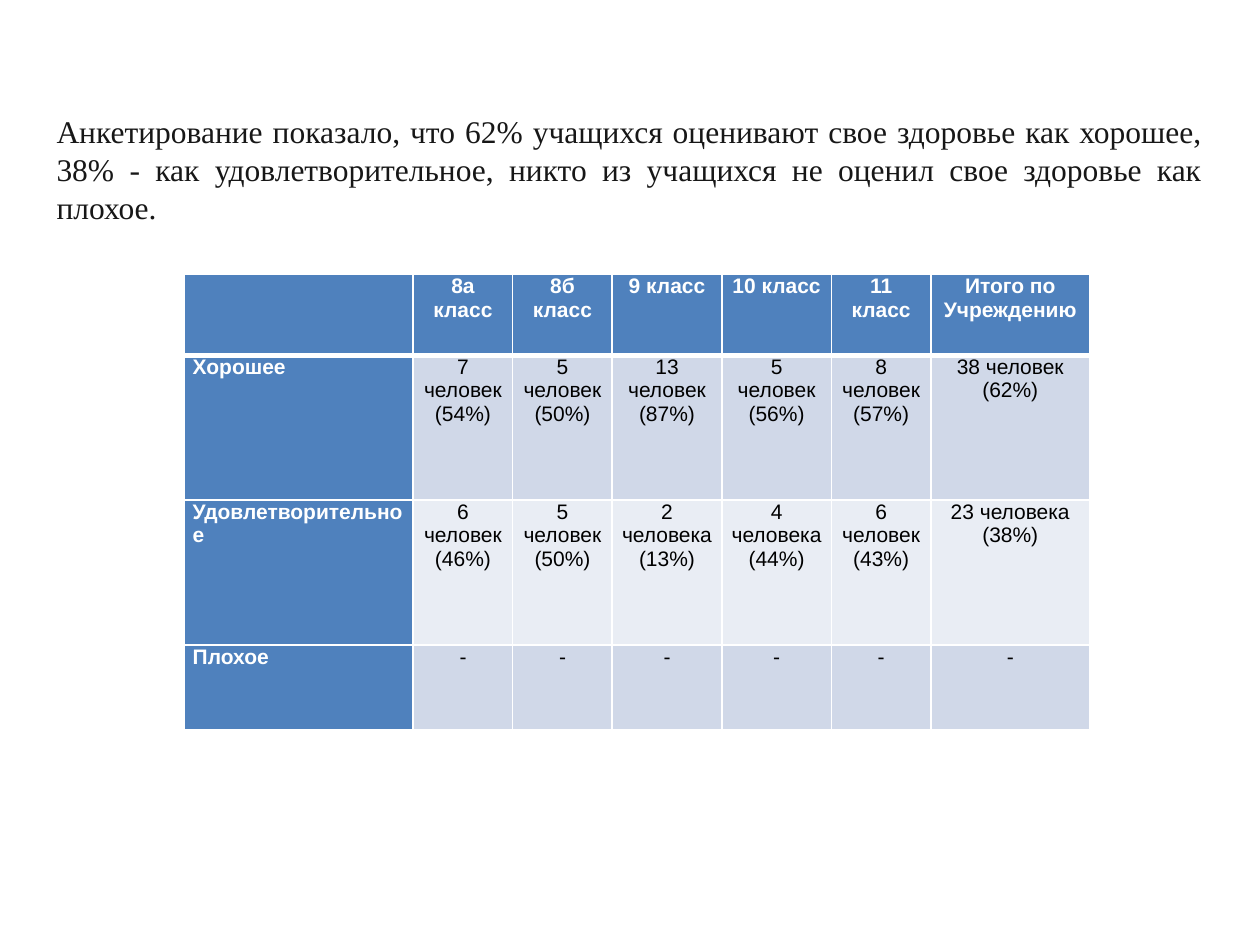
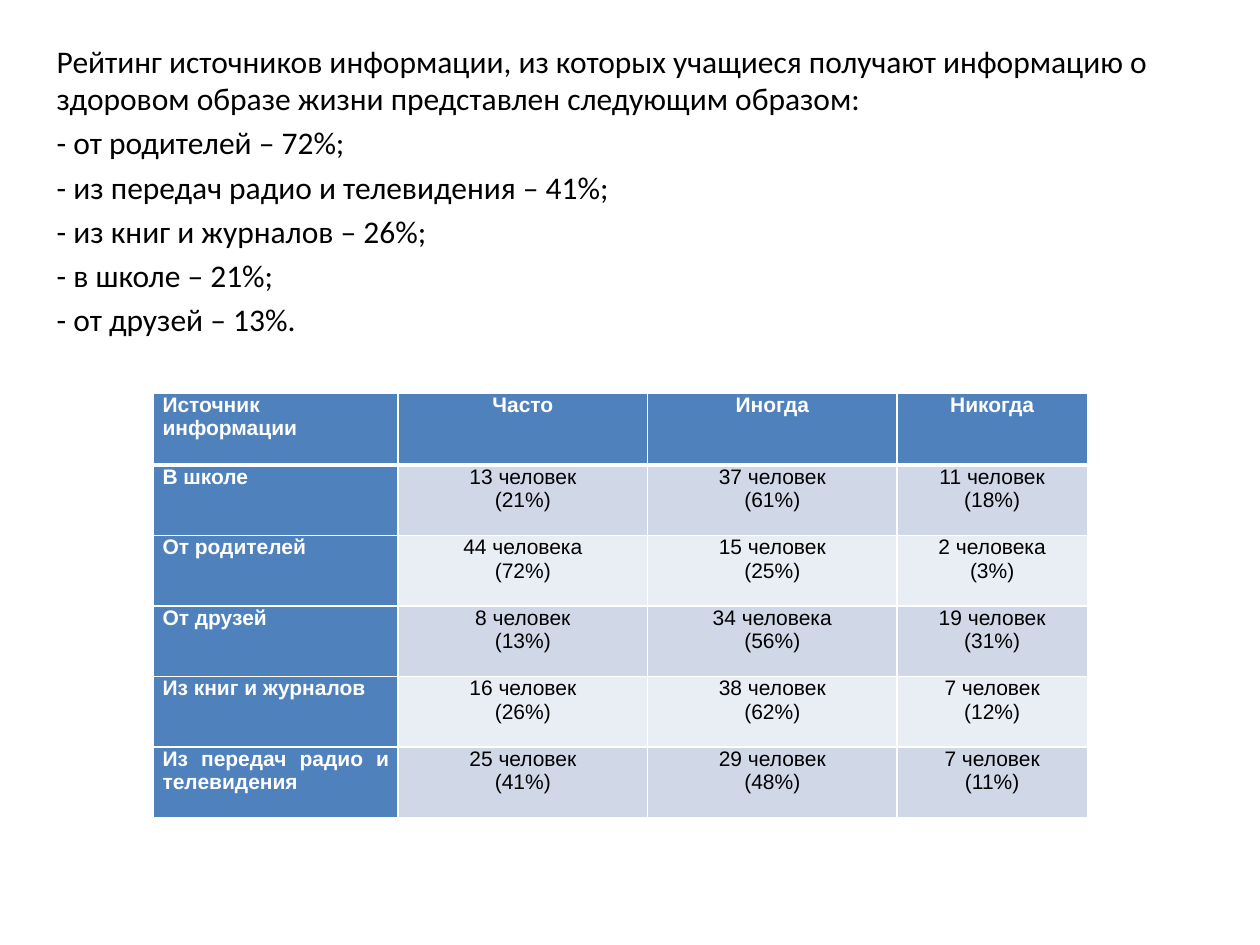
from lxml import etree
from pptx import Presentation
from pptx.dml.color import RGBColor
from pptx.enum import text
from pptx.oxml import ns
from pptx.util import Inches, Pt

WHITE = RGBColor(0xFF, 0xFF, 0xFF)
BLACK = RGBColor(0, 0, 0)
CHARCOAL = RGBColor(0x17, 0x17, 0x17)
HEADER_BLUE = RGBColor(0x4F, 0x81, 0xBD)
BANDS = (RGBColor(0xD0, 0xD8, 0xE8), RGBColor(0xE9, 0xED, 0xF4))
THIN, THICK = Pt(1), Pt(3)
LEFT_EDGE = 0.35
CENTER, JUSTIFY = text.PP_ALIGN.CENTER, text.PP_ALIGN.JUSTIFY


def answer(people, percent):
    """Cell text with the Russian plural form that fits the number."""
    few = people % 10 in (2, 3, 4) and people % 100 not in (12, 13, 14)
    return f"{people} {'человека' if few else 'человек'}\n({percent}%)"


class SurveyDeck:
    BODY_LAYOUT, BLANK_LAYOUT = 1, 6

    def __init__(self):
        self.deck = Presentation()
        self.deck.slide_width, self.deck.slide_height = Inches(10), Inches(7.5)
        self.page = None

    def new_page(self, layout):
        self.page = self.deck.slides.add_slide(self.deck.slide_layouts[layout])

    def style(self, paragraph, font, size, color, bold=False, align=None):
        paragraph.alignment = align
        paragraph.font.name = font
        paragraph.font.size = Pt(size)
        paragraph.font.color.rgb = color
        paragraph.font.bold = bold

    def statement(self, wording, top, width, height):
        box = self.page.shapes.add_textbox(
            *map(Inches, (LEFT_EDGE, top, width, height)))
        box.text_frame.word_wrap = True
        box.text_frame.text = wording
        self.style(box.text_frame.paragraphs[0], "Times New Roman", 18,
                   CHARCOAL, align=JUSTIFY)

    def body_list(self, lines, top, width, height):
        title = self.page.shapes.title
        title.element.getparent().remove(title.element)
        body = self.page.placeholders[1]
        body.left, body.top, body.width, body.height = map(
            Inches, (LEFT_EDGE, top, width, height))
        frame = body.text_frame
        frame.text = "\n".join(lines)
        frame.auto_size = text.MSO_AUTO_SIZE.NONE
        for index, paragraph in enumerate(frame.paragraphs):
            properties = paragraph._p.get_or_add_pPr()
            properties.set("marL", "0")
            properties.set("indent", "0")
            etree.SubElement(properties, ns.qn("a:buNone"))
            paragraph.space_before = Pt(3.6 if index else 0)
            self.style(paragraph, "Calibri", 18, BLACK)

    def borders(self, cell, top, bottom):
        properties = cell._tc.get_or_add_tcPr()
        edges = {"lnL": THIN, "lnR": THIN, "lnT": top, "lnB": bottom}
        for edge, width in edges.items():
            line = etree.SubElement(properties, ns.qn(f"a:{edge}"), w=str(width))
            fill = etree.SubElement(line, ns.qn("a:solidFill"))
            etree.SubElement(fill, ns.qn("a:srgbClr"), val=str(WHITE))

    def table(self, rows, left, top, widths, heights):
        frame = self.page.shapes.add_table(
            len(rows), len(widths), Inches(left), Inches(top),
            Inches(sum(widths)), Inches(sum(heights)))
        grid = frame.table
        for column, width in zip(grid.columns, widths):
            column.width = Inches(width)
        for row, height in zip(grid.rows, heights):
            row.height = Inches(height)
        for r, row in enumerate(rows):
            for c, wording in enumerate(row):
                self.fill_cell(grid.cell(r, c), wording, r, c)

    def fill_cell(self, cell, wording, r, c):
        heading = r == 0 or c == 0
        self.borders(cell, THICK if r == 1 else THIN, THICK if r == 0 else THIN)
        cell.fill.solid()
        cell.fill.fore_color.rgb = HEADER_BLUE if heading else BANDS[(r - 1) % 2]
        cell.margin_left = cell.margin_right = Inches(0.07)
        cell.margin_top = cell.margin_bottom = 0
        cell.text_frame.text = wording
        for paragraph in cell.text_frame.paragraphs:
            self.style(paragraph, "Arial", 12, WHITE if heading else BLACK,
                       heading, CENTER if c else JUSTIFY)


def answer_row(name, *answers):
    return [name, *(answer(*pair) for pair in answers)]


def main():
    survey = SurveyDeck()

    # Self-rated health by class
    survey.new_page(survey.BLANK_LAYOUT)
    health = [
        ["", "8а класс", "8б класс", "9 класс", "10 класс", "11 класс",
         "Итого по Учреждению"],
        answer_row("Хорошее", (7, 54), (5, 50), (13, 87), (5, 56), (8, 57),
                   (38, 62)),
        answer_row("Удовлетворительное", (6, 46), (5, 50), (2, 13), (4, 44),
                   (6, 43), (23, 38)),
        ["Плохое"] + ["-"] * 6,
    ]
    survey.table(health, 1.46, 2.18,
                 widths=[1.82, 0.79, 0.79, 0.87, 0.87, 0.79, 1.26],
                 heights=[0.64, 1.15, 1.15, 0.67])
    survey.statement(
        "Анкетирование показало, что 62% учащихся оценивают свое здоровье как "
        "хорошее, 38% - как удовлетворительное, никто из учащихся не оценил "
        "свое здоровье как плохое.", 0.84, 9.29, 1.01)

    # Rating of information sources
    survey.new_page(survey.BODY_LAYOUT)
    survey.body_list([
        "Рейтинг источников информации, из которых учащиеся получают "
        "информацию о здоровом образе жизни представлен следующим образом:",
        "- от родителей – 72%;",
        "- из передач радио и телевидения – 41%;",
        "- из книг и журналов – 26%;",
        "- в школе – 21%;",
        "- от друзей – 13%.",
    ], 0.28, 9, 2.6)
    sources = [
        ["Источник информации", "Часто", "Иногда", "Никогда"],
        answer_row("В школе", (13, 21), (37, 61), (11, 18)),
        answer_row("От родителей", (44, 72), (15, 25), (2, 3)),
        answer_row("От друзей", (8, 13), (34, 56), (19, 31)),
        answer_row("Из книг и журналов", (16, 26), (38, 62), (7, 12)),
        answer_row("Из передач радио и телевидения", (25, 41), (29, 48), (7, 11)),
    ]
    survey.table(sources, 1.22, 3.12, widths=[1.94, 1.98, 1.98, 1.51],
                 heights=[0.57] + [0.56] * 5)

    survey.deck.save("out.pptx")


if __name__ == "__main__":
    main()
